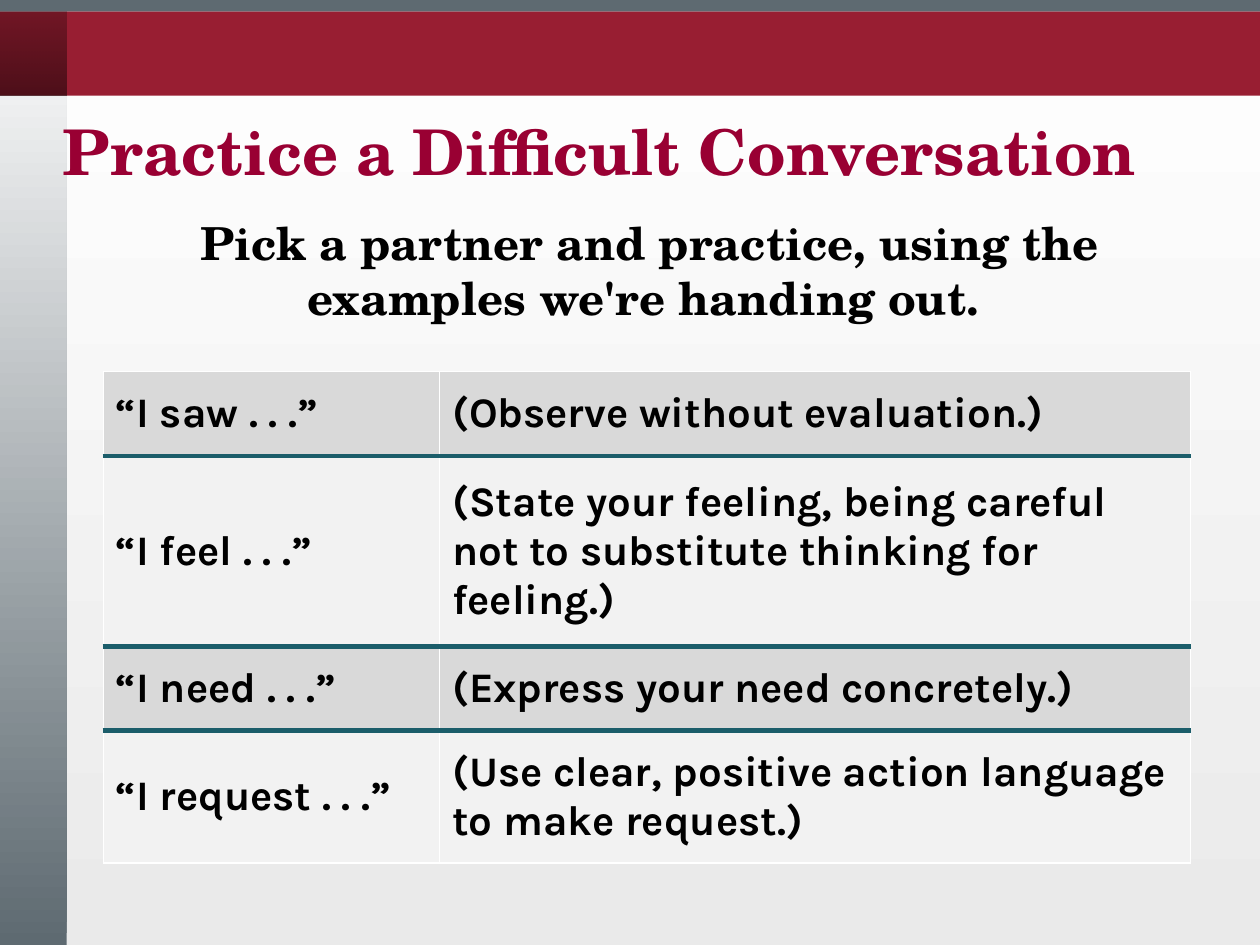
from pptx import Presentation
from pptx.util import Inches, Pt
from pptx.dml.color import RGBColor
from pptx.enum import shapes, text as txt
from pptx.oxml import ns, xmlchemy as xml
from lxml import etree

HUES = {
    "red": "981E32", "title": "990033", "slate": "5E6A71", "teal": "1B5D6A",
    "black": "000000", "white": "FFFFFF", "mist": "EAEAEA",
    "dark": "D9D9D9", "light": "F2F2F2",
}
SERIF = "TeX Gyre Schola"


def write(frame, words, size, font=SERIF, hue="black", align=txt.PP_ALIGN.LEFT, line=None):
    frame.word_wrap = True
    para = frame.paragraphs[0]
    para.alignment = align
    para.line_spacing = line
    run = para.add_run()
    run.text = words
    run.font.size = Pt(size)
    run.font.name = font
    run.font.bold = True
    run.font.color.rgb = RGBColor.from_string(HUES[hue])


def paint(fill, *hues):
    if len(hues) == 1:
        fill.solid()
        fill.fore_color.rgb = RGBColor.from_string(HUES[hues[0]])
        return
    fill.gradient()
    fill.gradient_angle = 90
    for stop, hue in zip(fill.gradient_stops, hues):
        stop.color.rgb = RGBColor.from_string(HUES[hue])


deck = Presentation()
deck.slide_width, deck.slide_height = Inches(10), Inches(7.5)
slide = deck.slides.add_slide(deck.slide_layouts[6])
paint(slide.background.fill, "mist", "white")

bars = [
    (0, 0, 0.53, 7.5, ["slate", "white"], []),
    (0, 0.09, 10, 0.67, ["red"], []),
    (-0.02, 0.09, 0.55, 0.67, ["black", "black"], [50, 25]),
    (-0.02, 0, 10.02, 0.09, ["slate"], []),
]
for left, top, wide, high, hues, clear in bars:
    bar = slide.shapes.add_shape(
        shapes.MSO_SHAPE.RECTANGLE, Inches(left), Inches(top), Inches(wide), Inches(high))
    bar.shadow.inherit = False
    bar.line.fill.background()
    paint(bar.fill, *hues)
    for tint, part in zip(bar.element.spPr.iter(ns.qn("a:srgbClr")), clear):
        etree.SubElement(tint, ns.qn("a:alpha"), val=str(part * 1000))

title = slide.shapes.add_textbox(Inches(0), Inches(0.9), Inches(10), Inches(0.65)).text_frame
title.margin_left = title.margin_right = Inches(0.5)
title.vertical_anchor = txt.MSO_ANCHOR.BOTTOM
write(title, "Practice a Difficult Conversation", 36, hue="title", line=0.9)

body = slide.shapes.add_textbox(Inches(0.91), Inches(1.66), Inches(8.5), Inches(0.98)).text_frame
write(body, "Pick a partner and practice, using the examples we're handing out. ", 26,
      align=txt.PP_ALIGN.CENTER)

rows = [
    (0.67, "“I saw . . .”", "(Observe without evaluation.)"),
    (1.51, "“I feel . . .”",
     "(State your feeling, being careful not to substitute thinking for feeling.)"),
    (0.67, "“I need . . .”", "(Express your need concretely.)"),
    (1.05, "“I request . . .”", "(Use clear, positive action language to make request.)"),
]
grid = slide.shapes.add_table(
    len(rows), 2, Inches(0.82), Inches(2.95), Inches(8.63), Inches(3.9)).table
grid.first_row = grid.horz_banding = False
for col, wide in zip(grid.columns, (2.67, 5.96)):
    col.width = Inches(wide)

thin, thick = ("white", 1), ("teal", 3)
for r, (high, *words) in enumerate(rows):
    grid.rows[r].height = Inches(high)
    edges = {
        "lnL": thin,
        "lnR": thin,
        "lnT": thick if r else thin,
        "lnB": thick if r < len(rows) - 1 else thin,
    }
    for c, word in enumerate(words):
        cell = grid.cell(r, c)
        cell.vertical_anchor = txt.MSO_ANCHOR.MIDDLE
        paint(cell.fill, "light" if r % 2 else "dark")
        write(cell.text_frame, word, 24, font="Karla")
        props = cell._tc.get_or_add_tcPr()
        for n, (tag, (hue, size)) in enumerate(edges.items()):
            edge = etree.Element(ns.qn("a:" + tag), w=str(Pt(size)))
            fill = etree.SubElement(edge, ns.qn("a:solidFill"))
            etree.SubElement(fill, ns.qn("a:srgbClr"), val=HUES[hue])
            props.insert(n, edge)

deck.save("out.pptx")
